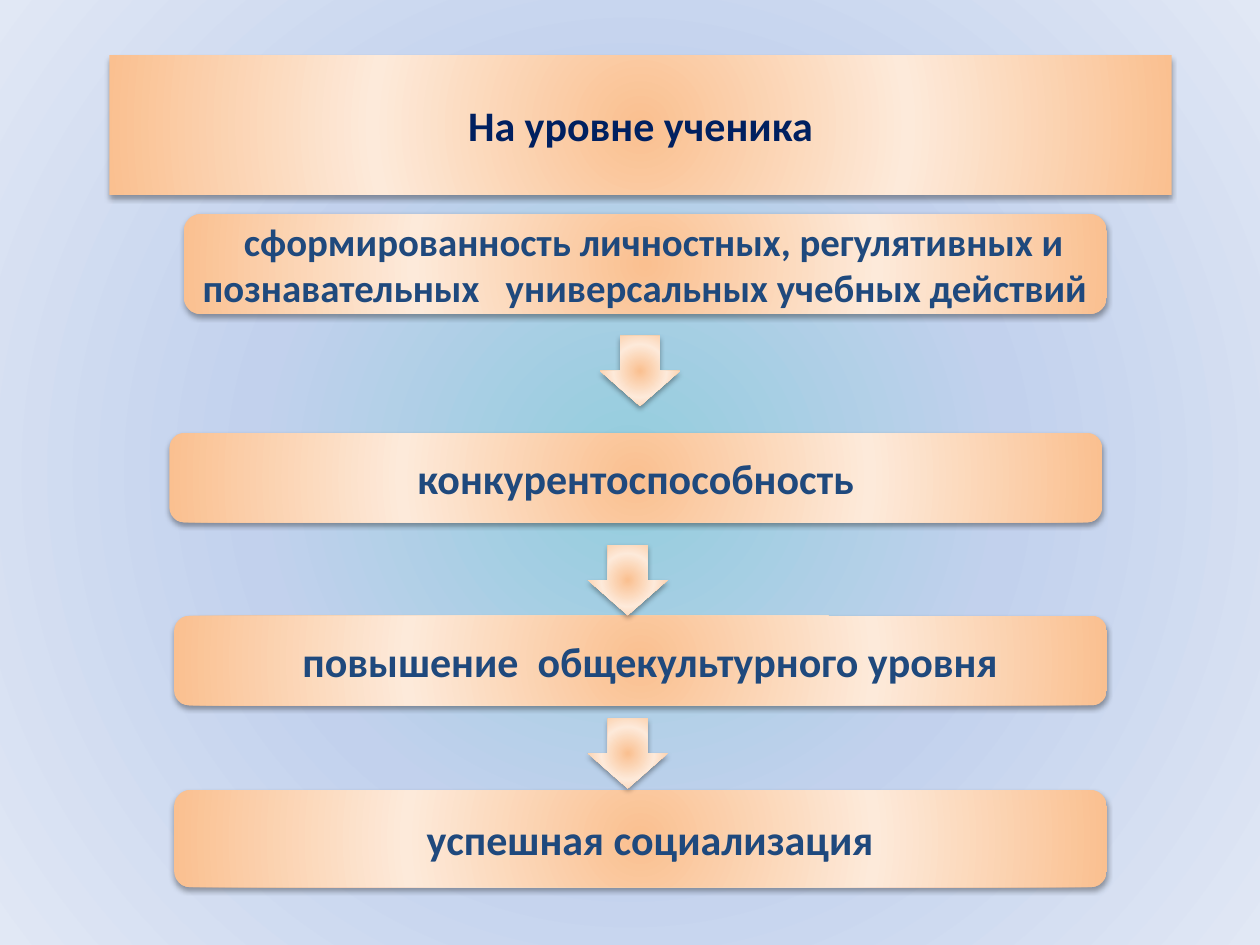
from lxml.etree import SubElement as Sub
from pptx import Presentation
from pptx.dml.color import RGBColor
from pptx.enum.shapes import MSO_SHAPE as Kind
from pptx.enum.text import MSO_ANCHOR as Anchor, PP_ALIGN as Align
from pptx.oxml.ns import qn
from pptx.util import Pt

NAVY, BLUE = "002060", "1F497D"
PEACH = [(0, "FAC090"), (50, "FDEADA"), (100, "FAC090")]
SKY = [(0, "93CDDD"), (48, "C2D1ED"), (100, "E1E8F5")]


def blend(props, stops):
    """Turn the solid fill in props into a circular gradient from the centre."""
    old = props.find(qn("a:solidFill"))
    grad = props.makeelement(qn("a:gradFill"), {"rotWithShape": "1"})
    props.replace(old, grad)
    items = Sub(grad, qn("a:gsLst"))
    for pos, tint in stops:
        stop = Sub(items, qn("a:gs"), pos=str(pos * 1000))
        Sub(stop, qn("a:srgbClr"), val=tint)
    ring = Sub(grad, qn("a:path"), {"path": "circle"})
    Sub(ring, qn("a:fillToRect"), {side: "50000" for side in "ltrb"})


def panel(kind, left, top, width, height):
    """Add a peach shape without outline, with a soft shadow below it."""
    shape = slide.shapes.add_shape(kind, Pt(left), Pt(top), Pt(width), Pt(height))
    shape.fill.solid()
    shape.line.fill.background()
    shape.shadow.inherit = False
    props = shape.element.spPr
    blend(props, PEACH)
    shade = Sub(props.find(qn("a:effectLst")), qn("a:outerShdw"),
                blurRad=str(Pt(3.1)), dist=str(Pt(1.8)), dir="5400000",
                rotWithShape="0")
    black = Sub(shade, qn("a:srgbClr"), val="000000")
    Sub(black, qn("a:alpha"), val="35000")
    return shape


deck = Presentation()
deck.slide_width, deck.slide_height = Pt(720), Pt(540)
slide = deck.slides.add_slide(deck.slide_layouts[6])
slide.background.fill.solid()
blend(next(slide.element.iter(qn("p:bgPr"))), SKY)

# kind, left, top, width, height, text, size, colour, first-line indent
ROUND = Kind.ROUNDED_RECTANGLE
boxes = [
    (Kind.RECTANGLE, 62.5, 31.7, 607, 79.5, "На уровне ученика", 24, NAVY, 0),
    (ROUND, 105, 122.4, 527.5, 57,
     "сформированность личностных, регулятивных и познавательных   "
     "универсальных учебных действий", 22.2, BLUE, 10),
    (ROUND, 96.8, 247.5, 533, 51, "конкурентоспособность", 24, BLUE, 0),
    (ROUND, 99.5, 352, 533, 51, "повышение  общекультурного уровня", 24, BLUE, 11),
    (ROUND, 99.5, 451.5, 533, 55.5, "успешная социализация", 24, BLUE, 11),
]
for kind, left, top, width, height, words, size, tint, indent in boxes:
    frame = panel(kind, left, top, width, height).text_frame
    frame.word_wrap = True
    frame.vertical_anchor = Anchor.MIDDLE
    para = frame.paragraphs[0]
    para.alignment = Align.CENTER
    para._p.get_or_add_pPr().set("indent", str(Pt(indent)))
    run = para.add_run()
    run.text = words
    run.font.name = "Calibri"
    run.font.size = Pt(size)
    run.font.bold = True
    run.font.color.rgb = RGBColor.from_string(tint)

for left, top in [(343, 192), (336, 311.5), (336, 410.5)]:
    panel(Kind.DOWN_ARROW, left, top, 45.5, 40)

deck.save("out.pptx")
